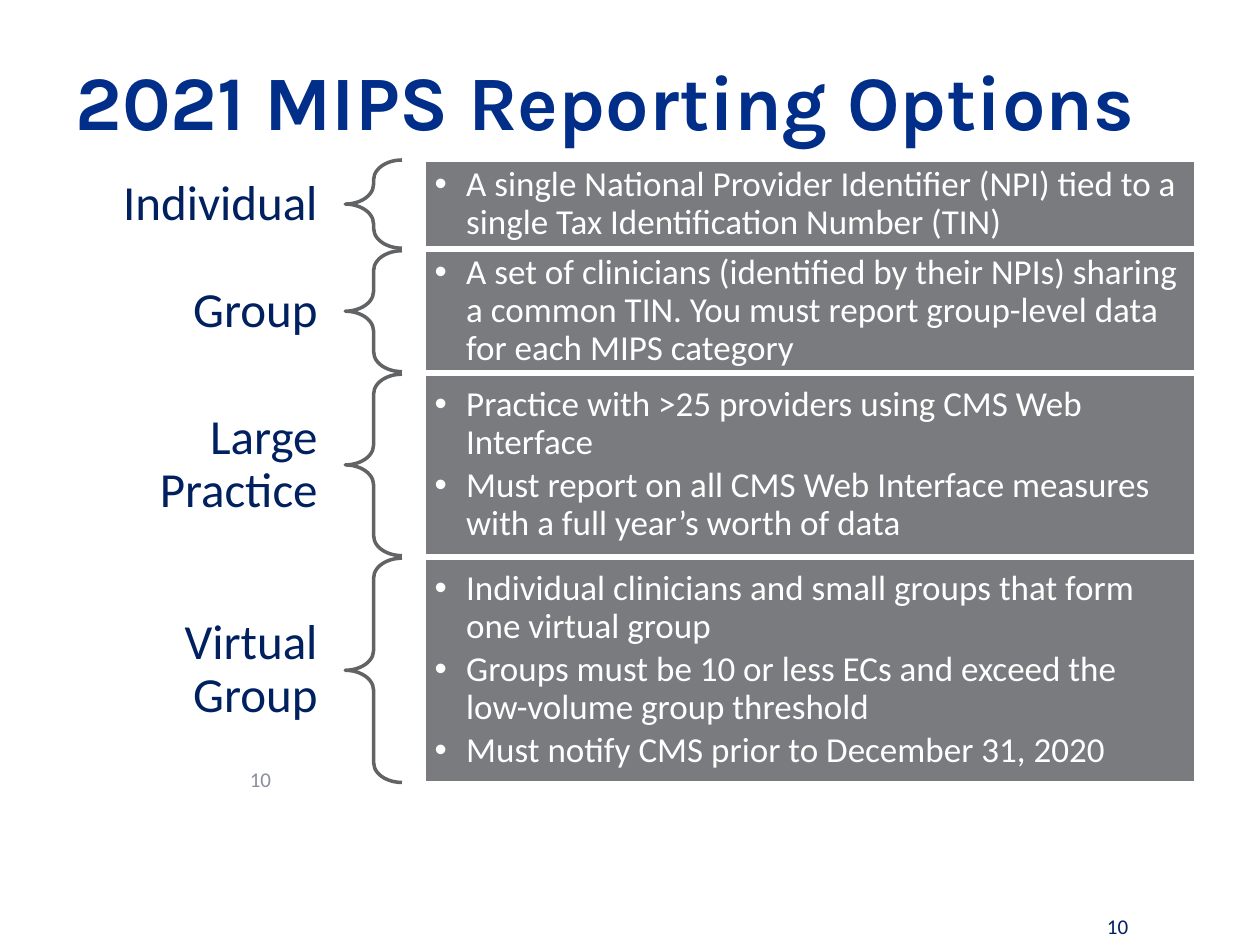
from dataclasses import dataclass

from lxml import etree
from pptx import Presentation
from pptx.dml.color import RGBColor
from pptx.enum import shapes, text
from pptx.oxml import ns
from pptx.util import Inches, Pt


@dataclass(frozen=True)
class Theme:
    heading: str = "Karla"
    body: str = "Calibri"
    title: str = "002E89"
    label: str = "002060"
    brace: str = "616365"
    panel: str = "797B7E"
    white: str = "FFFFFF"
    muted: str = "8C8D9D"
    title_size: int = 44
    label_size: int = 28
    body_size: int = 20
    number_size: int = 12
    line: int = 2


T = Theme()
ALIGN = text.PP_ALIGN
ROW_GAP = 0.02
OPTIONS = [
    ("Individual", 0.53, 0.7, [
        "A single National Provider Identifier (NPI) tied to a single Tax Identification Number (TIN)",
    ]),
    ("Group", 0.53, 0.96, [
        "A set of clinicians (identified by their NPIs) sharing a common TIN. "
        "You must report group-level data for each MIPS category",
    ]),
    ("Large Practice", 0.96, 1.44, [
        "Practice with >25 providers using CMS Web Interface",
        "Must report on all CMS Web Interface measures with a full year’s worth of data",
    ]),
    ("Virtual Group", 1.01, 1.78, [
        "Individual clinicians and small groups that form one virtual group",
        "Groups must be 10 or less ECs and exceed the low-volume group threshold",
        "Must notify CMS prior to December 31, 2020",
    ]),
]


def rgb(value):
    return RGBColor.from_string(value)


def place(sp, x, y, w, h):
    sp.left, sp.top, sp.width, sp.height = map(Inches, (x, y, w, h))


def add_bullet(p, indent=0.25):
    pPr = p._p.get_or_add_pPr()
    pPr.set("marL", str(Inches(indent)))
    pPr.set("indent", str(-Inches(indent)))
    etree.SubElement(pPr, ns.qn("a:buFont"), typeface="Arial")
    etree.SubElement(pPr, ns.qn("a:buChar"), char="•")


def write(tf, lines, *, size, color, font=T.body, bold=False, align=ALIGN.LEFT,
          margins=(0.1, 0.05), spacing=None, after=0, bullet=False):
    tf.word_wrap = True
    tf.auto_size = text.MSO_AUTO_SIZE.NONE
    tf.vertical_anchor = text.MSO_ANCHOR.MIDDLE
    tf.margin_left = tf.margin_right = Inches(margins[0])
    tf.margin_top = tf.margin_bottom = Inches(margins[1])
    for i, line in enumerate(lines):
        p = tf.add_paragraph() if i else tf.paragraphs[0]
        p.alignment = align
        p.line_spacing = spacing
        p.space_after = Pt(after)
        if bullet:
            add_bullet(p)
        r = p.add_run()
        r.text = line
        r.font.name, r.font.size, r.font.bold = font, Pt(size), bold
        r.font.color.rgb = rgb(color)


def add_text(s, x, y, w, h, line, **fmt):
    sp = s.shapes.add_textbox(*map(Inches, (x, y, w, h)))
    write(sp.text_frame, [line], **fmt)


def add_shape(s, kind, x, y, w, h, line, fill=None):
    sp = s.shapes.add_shape(kind, *map(Inches, (x, y, w, h)))
    sp.shadow.inherit = False
    sp.line.color.rgb = rgb(line)
    sp.line.width = Pt(T.line)
    if fill:
        sp.fill.solid()
        sp.fill.fore_color.rgb = rgb(fill)
    else:
        sp.fill.background()
    return sp


def add_title(s, x, y, w, h):
    sp = s.shapes.title
    place(sp, x, y, w, h)
    write(sp.text_frame, ["2021 MIPS Reporting Options"], size=T.title_size,
          color=T.title, font=T.heading, bold=True)


def add_option(s, x, y, w, h, label, label_h, points):
    label_w, brace_w, gap = 2.25, 0.45, 0.18
    add_text(s, x, y + (h - label_h) / 2, label_w, label_h, label,
             size=T.label_size, color=T.label, align=ALIGN.RIGHT,
             margins=(0.22, 0.08), spacing=0.9)
    brace = add_shape(s, shapes.MSO_SHAPE.LEFT_BRACE, x + label_w, y, brace_w, h, T.brace)
    brace.adjustments[0], brace.adjustments[1] = 0.35, 0.5
    offset = label_w + brace_w + gap
    panel = add_shape(s, shapes.MSO_SHAPE.RECTANGLE, x + offset, y, w - offset, h,
                      T.white, T.panel)
    write(panel.text_frame, points, size=T.body_size, color=T.white,
          margins=(0.08, 0.08), spacing=0.9, after=3, bullet=True)


def add_options(s, x, y, w):
    for label, label_h, h, points in OPTIONS:
        add_option(s, x, y, w, h, label, label_h, points)
        y += h + ROW_GAP


def add_numbers(s):
    add_text(s, 0, 6.03, 2.25, 0.3, "10", size=T.number_size, color=T.muted,
             align=ALIGN.RIGHT)
    add_text(s, 8.58, 7.2, 0.58, 0.3, "10", size=T.number_size, color=T.label,
             align=ALIGN.CENTER)


def main():
    prs = Presentation()
    prs.slide_width, prs.slide_height = Inches(10), Inches(7.5)
    s = prs.slides.add_slide(prs.slide_layouts[5])
    add_title(s, 0.5, 0.17, 9, 1.25)
    add_options(s, 0.49, 1.27, 9)
    add_numbers(s)
    prs.save("out.pptx")


if __name__ == "__main__":
    main()
